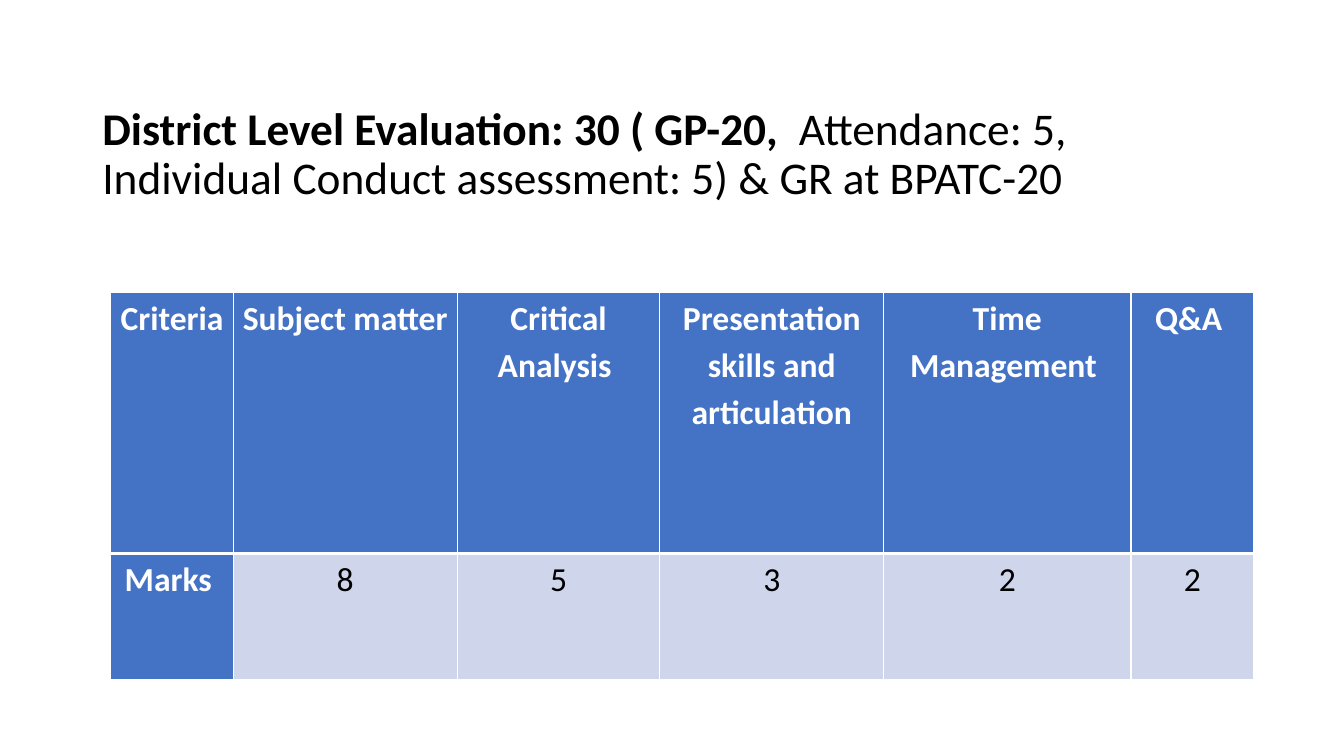
from pptx import Presentation
from pptx.dml.color import RGBColor
from pptx.enum.text import MSO_ANCHOR as Anchor, PP_ALIGN as Align
from pptx.oxml import parse_xml
from pptx.oxml.ns import nsdecls
from pptx.util import Cm, Pt

BLUE, PALE, WHITE, BLACK = "4472C4", "CFD5EA", "FFFFFF", "000000"

TITLE = [
    ("District Level Evaluation: 30 ( GP-20, ", True),
    (" Attendance: 5, Individual Conduct assessment: 5) & GR at BPATC-20", False),
]
ROWS = [
    ["Criteria ", "Subject matter ", "Critical Analysis ",
     "Presentation skills and articulation", "Time Management ", "Q&A "],
    ["Marks ", "8", "5", "3", "2", "2"],
]
WIDTHS = [3.09, 5.64, 5.11, 5.64, 6.23, 3.1]
HEIGHTS = [6.58, 3.18]


def color(code):
    return RGBColor.from_string(code)


def write(para, text, size=24, ink=BLACK, bold=False, align=Align.LEFT,
          line=1.0, after=0):
    para.alignment = align
    para.line_spacing = line
    para.space_after = Pt(after)
    run = para.add_run()
    run.text = text
    font = run.font
    font.name, font.size, font.bold = "Calibri", Pt(size), bold
    font.color.rgb = color(ink)


def border(cell, **sides):
    # Borders come before the fill in the cell properties
    props = cell._tc.get_or_add_tcPr()
    for spot, (side, width) in enumerate(sides.items()):
        props.insert(spot, parse_xml(
            f'<a:ln{side} {nsdecls("a")} w="{Pt(width)}"><a:solidFill>'
            f'<a:srgbClr val="{WHITE}"/></a:solidFill></a:ln{side}>'))


def heading(slide, left, top, width, height):
    box = slide.shapes.add_textbox(Cm(left), Cm(top), Cm(width), Cm(height))
    frame = box.text_frame
    frame.word_wrap = True
    frame.vertical_anchor = Anchor.MIDDLE
    frame.margin_top = Cm(1.5)
    for text, bold in TITLE:
        write(frame.paragraphs[0], text, size=32.4, bold=bold, line=0.9)


def marks(slide, left, top):
    grid = slide.shapes.add_table(
        len(ROWS), len(WIDTHS), Cm(left), Cm(top),
        Cm(sum(WIDTHS)), Cm(sum(HEIGHTS))).table
    for col, width in zip(grid.columns, WIDTHS):
        col.width = Cm(width)
    for row, height in zip(grid.rows, HEIGHTS):
        row.height = Cm(height)

    for r, texts in enumerate(ROWS):
        for c, text in enumerate(texts):
            cell = grid.cell(r, c)
            label = r == 0 or c == 0
            cell.margin_left = cell.margin_right = Cm(0.18)
            cell.margin_top = cell.margin_bottom = 0
            cell.fill.solid()
            cell.fill.fore_color.rgb = color(BLUE if label else PALE)
            # A thick rule parts the header from the marks
            border(cell, L=1, R=1, T=3 if r else 1, B=1 if r else 3)
            write(cell.text_frame.paragraphs[0], text, bold=label,
                  ink=WHITE if label else BLACK, align=Align.CENTER,
                  line=1.15, after=10)


def main():
    deck = Presentation()
    deck.slide_width, deck.slide_height = Cm(33.87), Cm(19.05)
    slide = deck.slides.add_slide(deck.slide_layouts[6])
    heading(slide, 2.33, 0.79, 29.21, 4.85)
    marks(slide, 2.79, 7.37)
    deck.save("out.pptx")


if __name__ == "__main__":
    main()
